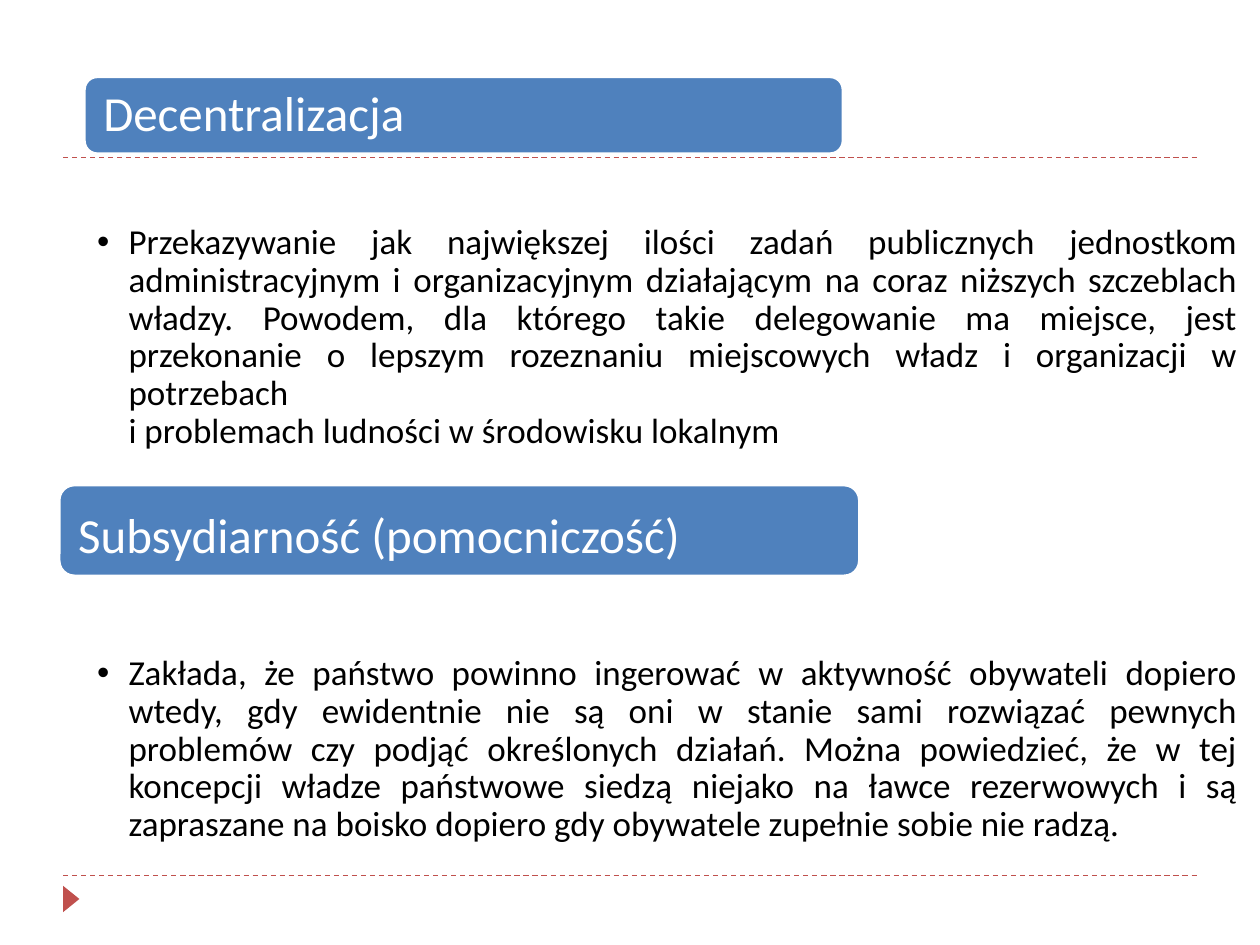
from lxml import etree
from pptx import Presentation
from pptx.dml.color import RGBColor
from pptx.enum.dml import MSO_LINE
from pptx.enum.shapes import MSO_CONNECTOR, MSO_SHAPE
from pptx.enum.text import MSO_ANCHOR, MSO_AUTO_SIZE, PP_ALIGN
from pptx.oxml.ns import qn
from pptx.util import Inches, Pt

DASH = MSO_LINE.DASH
STRAIGHT = MSO_CONNECTOR.STRAIGHT
ROUNDED = MSO_SHAPE.ROUNDED_RECTANGLE
TRIANGLE = MSO_SHAPE.ISOSCELES_TRIANGLE
TOP, MIDDLE = MSO_ANCHOR.TOP, MSO_ANCHOR.MIDDLE
LEFT, JUSTIFY = PP_ALIGN.LEFT, PP_ALIGN.JUSTIFY
NO_FIT = MSO_AUTO_SIZE.NONE

FONT = "Calibri"
COLORS = {"bar": "4F81BD", "accent": "C0504D", "white": "FFFFFF", "text": "000000"}

DECENTRALIZATION = [
    "Przekazywanie jak największej ilości zadań publicznych jednostkom "
    "administracyjnym i organizacyjnym działającym na coraz niższych szczeblach "
    "władzy. Powodem, dla którego takie delegowanie ma miejsce, jest przekonanie "
    "o lepszym rozeznaniu miejscowych władz i organizacji w potrzebach ",
    "i problemach ludności w środowisku lokalnym",
]
SUBSIDIARITY = [
    "Zakłada, że państwo powinno ingerować w aktywność obywateli dopiero wtedy, "
    "gdy ewidentnie nie są oni w stanie sami rozwiązać pewnych problemów czy "
    "podjąć określonych działań. Można powiedzieć, że w tej koncepcji władze "
    "państwowe siedzą niejako na ławce rezerwowych i są zapraszane na boisko "
    "dopiero gdy obywatele zupełnie sobie nie radzą.",
]


def color(name):
    return RGBColor.from_string(COLORS[name])


def place(sp, box):
    sp.left, sp.top, sp.width, sp.height = (Inches(v) for v in box)


def set_frame(tf, anchor, margins):
    tf.word_wrap = True
    tf.auto_size = NO_FIT
    tf.vertical_anchor = anchor
    tf.margin_left, tf.margin_top, tf.margin_right, tf.margin_bottom = (
        Inches(m) for m in margins)


def set_paragraph(p, align):
    p.alignment = align
    p.line_spacing = 0.9
    p.space_before = Pt(0)


def add_run(p, text, size, name):
    r = p.add_run()
    r.text = text
    r.font.name = FONT
    r.font.size = Pt(size)
    r.font.color.rgb = color(name)


def add_rule(s, y):
    line = s.shapes.add_connector(STRAIGHT, Inches(0.5), Inches(y), Inches(9.5), Inches(y))
    line.line.color.rgb = color("accent")
    line.line.width = Pt(0.75)
    line.line.dash_style = DASH
    etree.SubElement(line.element.spPr, qn("a:effectLst"))


def add_marker(s):
    sp = s.shapes.add_shape(TRIANGLE, *(Inches(v) for v in (0.46, 7.07, 0.21, 0.13)))
    sp.rotation = 90
    sp.shadow.inherit = False
    sp.fill.solid()
    sp.fill.fore_color.rgb = color("accent")
    sp.line.fill.background()


def add_heading(s, box, runs, title=None):
    """Draw a rounded bar with its text on top, in the title placeholder if given."""
    bar = s.shapes.add_shape(ROUNDED, *(Inches(v) for v in box))
    bar.shadow.inherit = False
    bar.fill.solid()
    bar.fill.fore_color.rgb = color("bar")
    bar.line.color.rgb = color("white")
    bar.line.width = Pt(1.5)

    left, top, width, height = box
    sp = title or s.shapes.add_textbox(0, 0, 0, 0)
    place(sp, (left + 0.03, top + 0.03, width - 0.06, height - 0.06))
    bar.element.addnext(sp.element)
    set_frame(sp.text_frame, MIDDLE, [0.12] * 4)
    p = sp.text_frame.paragraphs[0]
    set_paragraph(p, LEFT)
    for text, size in runs:
        add_run(p, text, size, "white")


def fill_body(sp, top, lines):
    """Fill a body placeholder with one bullet whose lines are split by breaks."""
    place(sp, (0.47, top, 9.49, 2.1))
    set_frame(sp.text_frame, TOP, (0.3, 0.35, 0.14, 0.03))
    p = sp.text_frame.paragraphs[0]
    set_paragraph(p, JUSTIFY)
    pPr = p._p.get_or_add_pPr()
    pPr.set("marL", str(Inches(0.25)))
    pPr.set("indent", str(-Inches(0.25)))
    etree.SubElement(pPr, qn("a:buFont"), typeface="Arial")
    etree.SubElement(pPr, qn("a:buChar"), char="•")
    for i, line in enumerate(lines):
        if i:
            p.add_line_break()
        add_run(p, line, 20, "text")


def main():
    prs = Presentation()
    prs.slide_width, prs.slide_height = Inches(10), Inches(7.5)
    s = prs.slides.add_slide(prs.slide_layouts[3])
    title, first_body, second_body = s.placeholders

    for y in (6.95, 1.25):
        add_rule(s, y)
    add_marker(s)
    add_heading(s, (0.67, 0.61, 6.02, 0.61), [("Decentralizacja", 28)], title)
    fill_body(first_body, 1.43, DECENTRALIZATION)
    add_heading(s, (0.47, 3.85, 6.35, 0.72),
                [("Subsydiarność (pomocniczość)", 28), (" ", 40)])
    fill_body(second_body, 4.85, SUBSIDIARITY)

    prs.save("out.pptx")


if __name__ == "__main__":
    main()
